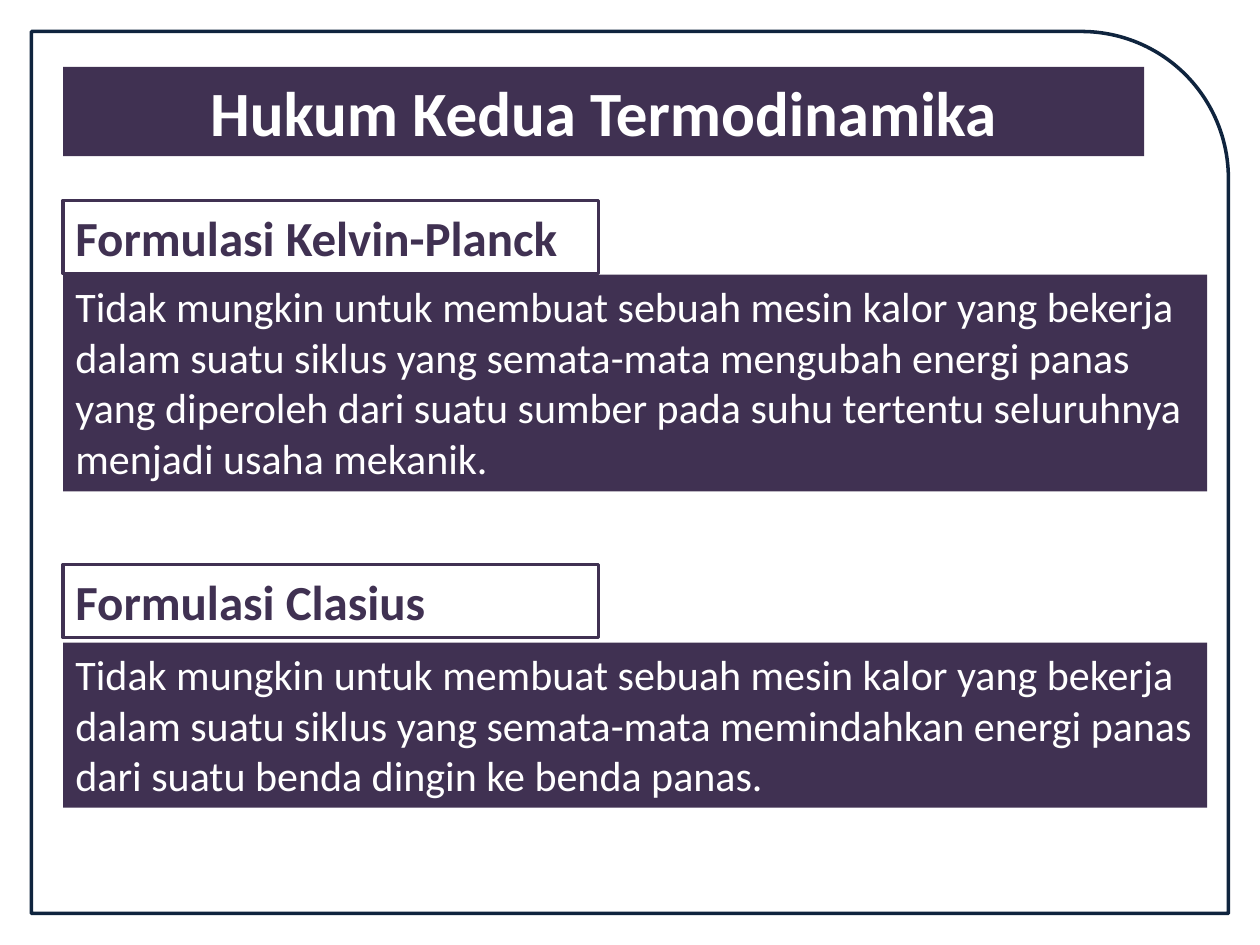
import pptx
import pptx.dml.color
import pptx.enum.shapes
import pptx.enum.text
import pptx.util

Inches = pptx.util.Inches
Anchor = pptx.enum.text.MSO_ANCHOR
Align = pptx.enum.text.PP_ALIGN
Shapes = pptx.enum.shapes.MSO_SHAPE

# Content
TITLE = "Hukum Kedua Termodinamika"
FORMULATIONS = [
    {
        "heading": "Formulasi Kelvin-Planck",
        "statement": [
            "Tidak mungkin untuk membuat sebuah mesin kalor yang bekerja dalam suatu "
            "siklus yang semata-mata mengubah energi panas yang diperoleh dari suatu "
            "sumber pada suhu tertentu seluruhnya menjadi usaha mekanik.",
        ],
        "top": 1.59, "statement_top": 2.18, "statement_height": 1.72,
    },
    {
        "heading": "Formulasi Clasius",
        "statement": [
            "Tidak mungkin untuk membuat sebuah mesin kalor yang bekerja",
            "dalam suatu siklus yang semata-mata memindahkan energi panas dari suatu "
            "benda dingin ke benda panas.",
        ],
        "top": 4.48, "statement_top": 5.1, "statement_height": 1.31,
    },
]

# Format
COLORS = {"frame": "0F243E", "purple": "403152", "white": "FFFFFF"}
TITLE_FONT = {"name": "Calibri", "size": pptx.util.Pt(36), "bold": True}
HEADING_FONT = {"name": "Calibri", "size": pptx.util.Pt(28), "bold": True}
STATEMENT_FONT = {"name": "Calibri", "size": pptx.util.Pt(24), "bold": False}

# Layout in inches
WIDTH, HEIGHT = 10, 7.5
MARGIN = 0.25
LEFT = 2 * MARGIN
TITLE_BOX = (LEFT, 0.53, 8.58, 0.71)
HEADING_WIDTH, HEADING_HEIGHT = 4.25, 0.58
STATEMENT_WIDTH = 9.08


def color(name):
    return pptx.dml.color.RGBColor.from_string(COLORS[name])


def place(shape, box):
    for side, length in zip(("left", "top", "width", "height"), box):
        setattr(shape, side, Inches(length))


def paint(shape, fill, line=None):
    shape.shadow.inherit = False
    if fill:
        shape.fill.solid()
        shape.fill.fore_color.rgb = color(fill)
    else:
        shape.fill.background()
    if line:
        shape.line.color.rgb = color(line)
        shape.line.width = pptx.util.Pt(2)
    else:
        shape.line.fill.background()


def write(shape, texts, font, font_color, anchor=Anchor.TOP, align=Align.LEFT):
    frame = shape.text_frame
    frame.text = "\n".join(texts)
    settings = {
        "word_wrap": True,
        "auto_size": pptx.enum.text.MSO_AUTO_SIZE.NONE,
        "vertical_anchor": anchor,
    }
    for key, value in settings.items():
        setattr(frame, key, value)
    for paragraph in frame.paragraphs:
        paragraph.alignment = align
        for key, value in font.items():
            setattr(paragraph.font, key, value)
        paragraph.font.color.rgb = color(font_color)


def add_shape(slide, kind, box, fill, line=None):
    shape = slide.shapes.add_shape(kind, *map(Inches, box))
    paint(shape, fill, line)
    return shape


def main():
    presentation = pptx.Presentation()
    presentation.slide_width = Inches(WIDTH)
    presentation.slide_height = Inches(HEIGHT)
    slide = presentation.slides.add_slide(presentation.slide_layouts[5])

    # Frame with one rounded corner
    frame_box = (MARGIN, MARGIN, WIDTH - 2 * MARGIN, HEIGHT - 2 * MARGIN)
    add_shape(slide, Shapes.ROUND_1_RECTANGLE, frame_box, None, "frame")

    # Title band
    title = slide.shapes.title
    place(title, TITLE_BOX)
    title.fill.solid()
    title.fill.fore_color.rgb = color("purple")
    write(title, [TITLE], TITLE_FONT, "white", align=Align.CENTER)

    # Formulations: statement below its heading
    for item in FORMULATIONS:
        statement_box = (LEFT, item["statement_top"], STATEMENT_WIDTH, item["statement_height"])
        statement = add_shape(slide, Shapes.RECTANGLE, statement_box, "purple")
        write(statement, item["statement"], STATEMENT_FONT, "white")

        heading_box = (LEFT, item["top"], HEADING_WIDTH, HEADING_HEIGHT)
        heading = add_shape(slide, Shapes.RECTANGLE, heading_box, "white", "purple")
        write(heading, [item["heading"]], HEADING_FONT, "purple", Anchor.MIDDLE)

    presentation.save("out.pptx")


if __name__ == "__main__":
    main()
